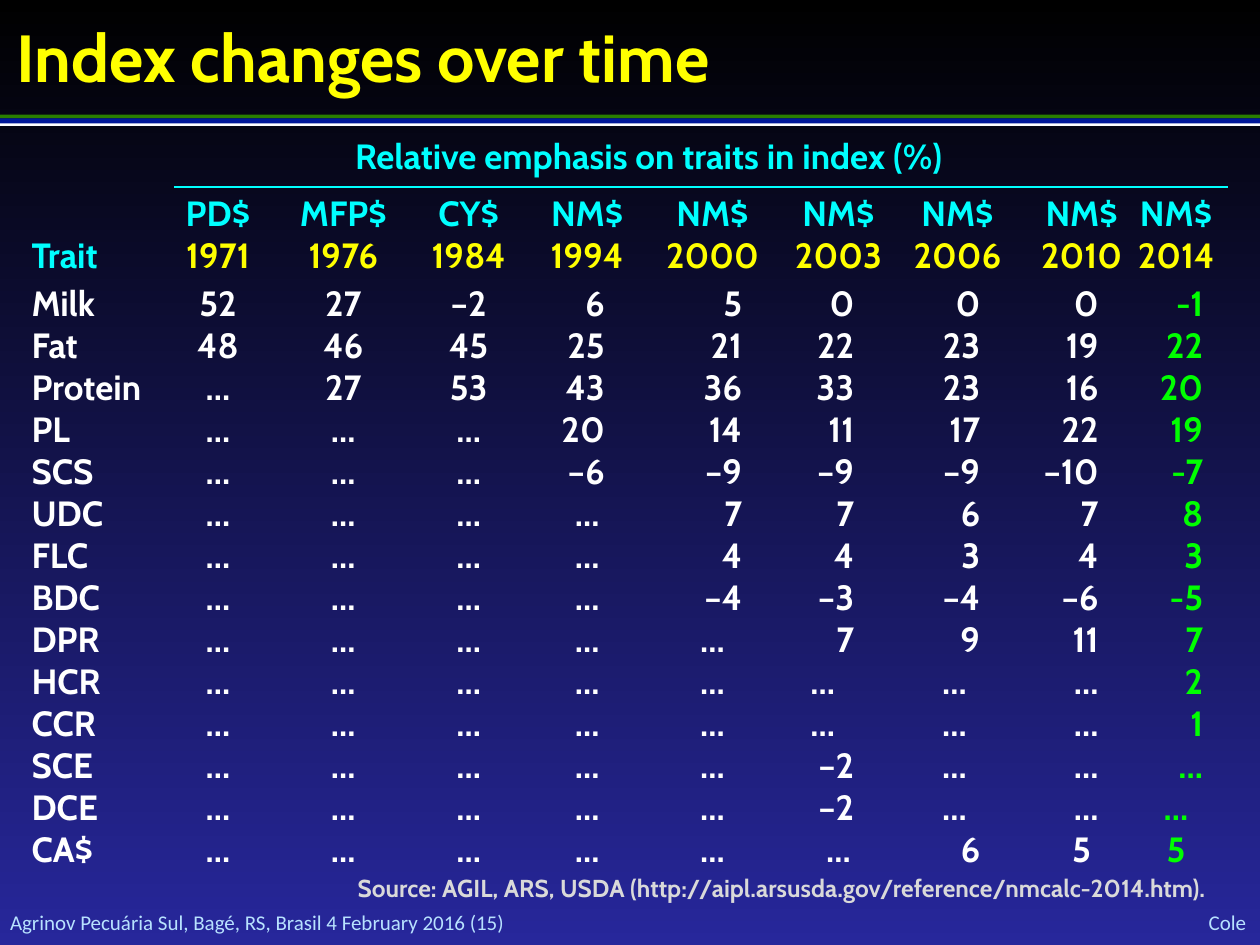
from dataclasses import dataclass

from lxml.etree import SubElement
from pptx import Presentation
from pptx.dml.color import RGBColor
from pptx.enum.shapes import MSO_SHAPE as Shape
from pptx.enum.text import MSO_ANCHOR as Anchor, MSO_AUTO_SIZE as AutoSize, PP_ALIGN as Align
from pptx.oxml.ns import qn
from pptx.util import Inches, Pt


@dataclass(frozen=True)
class Theme:
    """Fonts, type sizes and colours of the page."""
    font: str = "Cabin"
    footer_font: str = "Calibri"
    title_size: int = 38
    table_size: int = 20
    table_line: float = 23.9
    table_row: int = 24
    source_size: int = 14
    footer_size: int = 12
    top: str = "000000"
    bottom: str = "27279B"
    yellow: str = "FFFF00"
    cyan: str = "00FFFF"
    white: str = "FFFFFF"
    green: str = "00FF00"
    grey: str = "D9D9D9"
    pale_blue: str = "B8E2FF"
    rule_green: str = "2A7E00"
    rule_blue: str = "001799"


THEME = Theme()


@dataclass(frozen=True)
class Style:
    """Look of one run of text."""
    size: int
    color: str
    font: str = THEME.font
    bold: bool = True


@dataclass(frozen=True)
class Label:
    """A line of text in its own box."""
    text: str
    box: tuple
    style: Style
    align: Align = Align.LEFT
    inset: tuple = (0, 0, 0, 0)
    anchor: Anchor = Anchor.MIDDLE


@dataclass(frozen=True)
class Rule:
    """A coloured band across the page."""
    top: float
    height: float
    color: str


@dataclass(frozen=True)
class Column:
    """One table column: its width, heading and number layout."""
    width: float
    index: str = ""
    year: str = ""
    align: Align = Align.CENTER
    right: float = 0
    dots_align: Align = Align.CENTER
    dots_right: float = 0
    head_right: float = 0


TITLE = Style(THEME.title_size, THEME.yellow)
HEAD = Style(THEME.table_size, THEME.cyan)
YEAR = Style(THEME.table_size, THEME.yellow)
BODY = Style(THEME.table_size, THEME.white)
LATEST = Style(THEME.table_size, THEME.green)
SOURCE = Style(THEME.source_size, THEME.grey)
FOOTER = Style(THEME.footer_size, THEME.pale_blue, THEME.footer_font, False)

RULES = [
    Rule(0.91, 0.03, THEME.rule_green),
    Rule(0.97, 0.03, THEME.white),
    Rule(0.94, 0.04, THEME.rule_blue),
]
LABELS = [
    Label("Agrinov Pecuária Sul, Bagé, RS, Brasil 4 February 2016 (15)",
          (0.08, 7.22, 8.5, 0.2), FOOTER),
    Label("Cole", (8.77, 7.21, 1.12, 0.21), FOOTER, Align.RIGHT),
    Label("Source: AGIL, ARS, USDA (http://aipl.arsusda.gov/reference/nmcalc-2014.htm).",
          (1, 6.88, 8.67, 0.34), SOURCE, Align.RIGHT, (0.1, 0.05, 0.1, 0.05), Anchor.TOP),
]
COLUMNS = [
    Column(1.13, align=Align.LEFT),
    Column(0.7, "PD$", "1971"),
    Column(1.29, "MFP$", "1976"),
    Column(0.7, "CY$", "1984"),
    Column(1.18, "NM$", "1994", Align.RIGHT, 0.45),
    Column(0.81, "NM$", "2000", Align.RIGHT, 0.17),
    Column(1.19, "NM$", "2003", Align.RIGHT, 0.47, dots_right=0.25),
    Column(1, "NM$", "2006", Align.RIGHT, 0.47, dots_right=0.35, head_right=0.3),
    Column(0.67, "NM$", "2010", Align.RIGHT, 0.2, Align.RIGHT, 0.2),
    Column(0.83, "NM$", "2014", Align.RIGHT, 0.2, Align.RIGHT, 0.2),
]
TRAITS = """
Milk 52 27 –2 6 5 0 0 0 -1
Fat 48 46 45 25 21 22 23 19 22
Protein … 27 53 43 36 33 23 16 20
PL … … … 20 14 11 17 22 19
SCS … … … –6 –9 –9 –9 –10 -7
UDC … … … … 7 7 6 7 8
FLC … … … … 4 4 3 4 3
BDC … … … … –4 –3 –4 –6 -5
DPR … … … … … 7 9 11 7
HCR … … … … … … … … 2
CCR … … … … … … … … 1
SCE … … … … … –2 … … …
DCE … … … … … –2 … … …
CA$ … … … … … … 6 5 5
"""
CENTERED = {("DCE", 9), ("CA$", 6), ("CA$", 8), ("CA$", 9)}


def add_span(para, text: str, style: Style) -> None:
    """Add one formatted run to a paragraph."""
    span = para.add_run()
    span.text = text
    span.font.name = style.font
    span.font.size = Pt(style.size)
    span.font.bold = style.bold
    span.font.color.rgb = RGBColor.from_string(style.color)


def set_margins(holder, inset: tuple) -> None:
    """Set left, top, right and bottom margins in inches."""
    sides = ("left", "top", "right", "bottom")
    for side, length in zip(sides, inset):
        setattr(holder, f"margin_{side}", Inches(length))


def add_label(page, label: Label) -> None:
    """Place one line of text."""
    box = page.shapes.add_textbox(*map(Inches, label.box))
    frame = box.text_frame
    frame.word_wrap = True
    frame.vertical_anchor = label.anchor
    set_margins(frame, label.inset)
    para = frame.paragraphs[0]
    para.alignment = label.align
    add_span(para, label.text, label.style)


def add_rule(page, rule: Rule, width: int) -> None:
    """Draw one band across the page."""
    band = page.shapes.add_shape(Shape.RECTANGLE, 0, Inches(rule.top), width, Inches(rule.height))
    band.shadow.inherit = False
    band.fill.solid()
    band.fill.fore_color.rgb = RGBColor.from_string(rule.color)
    band.line.fill.background()


def fill_cell(cell, lines: list, align: Align, inset: tuple) -> None:
    """Write (text, style) lines into a cell, one paragraph each."""
    set_margins(cell, inset)
    frame = cell.text_frame
    for number, (text, style) in enumerate(lines):
        para = frame.add_paragraph() if number else frame.paragraphs[0]
        para.alignment = align
        para.line_spacing = Pt(THEME.table_line)
        add_span(para, text, style)


def add_border(cell, tag: str, color: str = "") -> None:
    """Draw one side of a cell, or clear it when no colour is given."""
    line = SubElement(cell._tc.get_or_add_tcPr(), qn(tag), w=str(Pt(1.5)))
    if color:
        SubElement(SubElement(line, qn("a:solidFill")), qn("a:srgbClr"), val=color)
    else:
        SubElement(line, qn("a:noFill"))


def add_trait_table(page) -> None:
    """Build the table of trait emphasis by index and year."""
    traits = [row.split() for row in TRAITS.strip().splitlines()]
    line = Pt(THEME.table_row)
    heights = [line + Inches(0.05), 2 * line + Inches(0.1)] + [line] * len(traits)
    place = (Inches(0.25), Inches(1.08), Inches(9.5), sum(heights))
    table = page.shapes.add_table(len(heights), len(COLUMNS), *place).table
    table.first_row = table.horz_banding = False
    style_id = table._tbl.tblPr.find(qn("a:tableStyleId"))
    style_id.text = "{2D5ABB26-0587-4C30-8999-92F81FD0307C}"
    for row, height in zip(table.rows, heights):
        row.height = height
    for index, column in enumerate(COLUMNS):
        table.columns[index].width = Inches(column.width)
        if column.index:
            add_border(table.cell(0, index), "a:lnB", THEME.cyan)
            head = table.cell(1, index)
            fill_cell(head, [(column.index, HEAD), (column.year, YEAR)],
                      Align.CENTER, (0, 0.05, column.head_right, 0.05))
            add_border(head, "a:lnT", THEME.cyan)
            add_border(head, "a:lnB")
            add_border(table.cell(2, index), "a:lnT")
    corner, heading = table.cell(0, 0), table.cell(0, 1)
    corner.merge(table.cell(1, 0))
    corner.vertical_anchor = Anchor.BOTTOM
    fill_cell(corner, [("Trait", HEAD)], Align.LEFT, (0, 0, 0, 0.05))
    heading.merge(table.cell(0, 8))
    fill_cell(heading, [("Relative emphasis on traits in index (%)", HEAD)],
              Align.CENTER, (0, 0, 0, 0.05))
    for number, values in enumerate(traits, start=2):
        for index, (text, column) in enumerate(zip(values, COLUMNS)):
            align, right = column.align, column.right
            if (values[0], index) in CENTERED:
                align, right = Align.CENTER, 0
            elif text == "…":
                align, right = column.dots_align, column.dots_right
            style = LATEST if column is COLUMNS[-1] else BODY
            fill_cell(table.cell(number, index), [(text, style)], align, (0, 0, right, 0))


def set_title(page, text: str) -> None:
    """Move and format the title placeholder."""
    title = page.shapes.title
    title.left, title.top, title.width, title.height = map(Inches, (0.13, 0.13, 9, 0.64))
    frame = title.text_frame
    frame.auto_size = AutoSize.NONE
    frame.vertical_anchor = Anchor.TOP
    set_margins(frame, (0, 0, 0, 0))
    frame.paragraphs[0].alignment = Align.LEFT
    add_span(frame.paragraphs[0], text, TITLE)


def set_background(page) -> None:
    """Shade the page from top to bottom."""
    fill = page.background.fill
    fill.gradient()
    fill.gradient_angle = 270
    for stop, position, color in zip(fill.gradient_stops, (0, 1), (THEME.top, THEME.bottom)):
        stop.position = position
        stop.color.rgb = RGBColor.from_string(color)


def main() -> None:
    """Build and save the deck."""
    deck = Presentation()
    deck.slide_width, deck.slide_height = Inches(10), Inches(7.5)
    page = deck.slides.add_slide(deck.slide_layouts[5])
    set_background(page)
    for rule in RULES:
        add_rule(page, rule, deck.slide_width)
    add_trait_table(page)
    set_title(page, "Index changes over time")
    for label in LABELS:
        add_label(page, label)
    deck.save("out.pptx")


if __name__ == "__main__":
    main()
